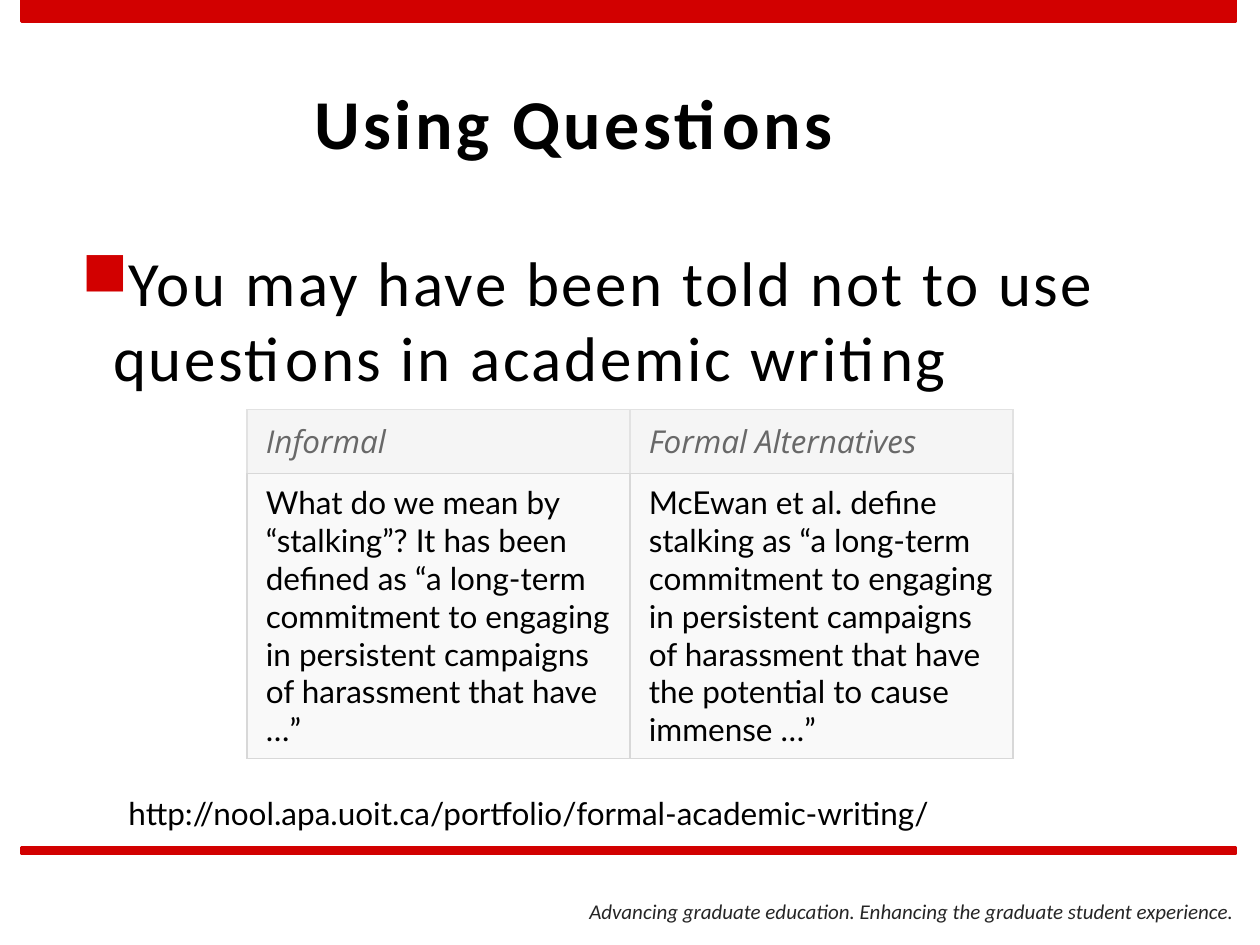
"""Build the slide on using questions in academic writing."""
from lxml import etree
from pptx import Presentation
from pptx.dml.color import RGBColor
from pptx.enum.shapes import MSO_SHAPE
from pptx.enum.text import MSO_ANCHOR, PP_ALIGN
from pptx.oxml.ns import qn
from pptx.util import Cm, Pt

RECT = MSO_SHAPE.RECTANGLE
MIDDLE, TOP = MSO_ANCHOR.MIDDLE, MSO_ANCHOR.TOP
LEFT, CENTER = PP_ALIGN.LEFT, PP_ALIGN.CENTER

HUES = {"red": "D20000", "ink": "000000", "dark": "262626", "gray": "686868",
        "head": "F5F5F5", "cell": "F9F9F9", "rim": "E2E2E2", "rule": "D8D8D8"}

BARS = [(0, 0.43), (17.09, 0.13)]
TEXTS = [
    ("Advancing graduate education. Enhancing the graduate student experience.",
     (11.63, 17.98, 13.54, 0.86), dict(size=12, hue="dark", italic=True)),
    ("You may have been told not to use questions in academic writing",
     (1.27, 4.78, 23.34, 12.24), dict(size=36, track=150, bullet="■")),
    ("Using Questions", (1.07, 0.99, 23.29, 2.92),
     dict(size=40, bold=True, track=200, align=CENTER, anchor=MIDDLE, right=2.54)),
    ("http://nool.apa.uoit.ca/portfolio/formal-academic-writing/",
     (2.34, 15.88, 22.02, 1.07), dict(face="Lato")),
]
ROWS = [
    ("Informal", "Formal Alternatives"),
    ("What do we mean by “stalking”? It has been defined as “a long-term "
     "commitment to engaging in persistent campaigns of harassment that have …”",
     "McEwan et al. define stalking as “a long-term commitment to engaging in "
     "persistent campaigns of harassment that have the potential to cause immense …”"),
]
STYLES = [
    dict(high=1.29, fill="head", rims=("rim", "rim", "rim", "rule"), right=0.38,
         font=dict(face="Open Sans", hue="gray", italic=True)),
    dict(high=5.74, fill="cell", rims=("rule",) * 4, right=0.2,
         font=dict(face="Lato")),
]
GRID = (4.98, 8.26)
WIDE = 7.72


def color(name):
    return RGBColor.from_string(HUES[name])


def mark(para, sign):
    props = para._p.get_or_add_pPr()
    props.set("marL", str(Cm(0.76)))
    props.set("indent", str(Cm(-0.64)))
    tint = etree.SubElement(props, qn("a:buClr"))
    etree.SubElement(tint, qn("a:srgbClr"), val=HUES["red"])
    etree.SubElement(props, qn("a:buChar"), char=sign)


def write(frame, text, face="Calibri", size=18, hue="ink", bold=False,
          italic=False, track=0, align=LEFT, bullet=None):
    para = frame.paragraphs[0]
    para.alignment = align
    if bullet:
        mark(para, bullet)
    run = para.add_run()
    run.text = text
    font = run.font
    font.name, font.size = face, Pt(size)
    font.bold, font.italic = bold, italic
    font.color.rgb = color(hue)
    if track:
        run._r.get_or_add_rPr().set("spc", str(track))


def add_bar(slide, top, high):
    bar = slide.shapes.add_shape(RECT, Cm(0.43), Cm(top), Cm(24.49), Cm(high))
    bar.shadow.inherit = False
    bar.fill.solid()
    bar.fill.fore_color.rgb = color("red")
    bar.line.color.rgb = color("red")
    bar.line.width = Pt(1.5)


def add_text(slide, text, place, anchor=TOP, right=0.25, **style):
    frame = slide.shapes.add_textbox(*map(Cm, place)).text_frame
    frame.word_wrap = True
    frame.vertical_anchor = anchor
    frame.margin_right = Cm(right)
    write(frame, text, **style)


def edge(cell, rims):
    props = cell._tc.get_or_add_tcPr()
    for spot, (side, hue) in enumerate(zip("LRTB", rims)):
        line = etree.Element(qn(f"a:ln{side}"), w=str(Pt(0.75)))
        fill = etree.SubElement(line, qn("a:solidFill"))
        etree.SubElement(fill, qn("a:srgbClr"), val=HUES[hue])
        props.insert(spot, line)


def add_grid(slide):
    left, top = map(Cm, GRID)
    high = sum(style["high"] for style in STYLES)
    table = slide.shapes.add_table(len(ROWS), 2, left, top,
                                   Cm(2 * WIDE), Cm(high)).table
    for col in table.columns:
        col.width = Cm(WIDE)
    for row, texts, style in zip(table.rows, ROWS, STYLES):
        row.height = Cm(style["high"])
        for cell, text in zip(row.cells, texts):
            cell.fill.solid()
            cell.fill.fore_color.rgb = color(style["fill"])
            cell.vertical_anchor = MIDDLE
            cell.margin_left, cell.margin_right = Cm(0.38), Cm(style["right"])
            cell.margin_top = cell.margin_bottom = Cm(0.2)
            edge(cell, style["rims"])
            write(cell.text_frame, text, **style["font"])


def main():
    deck = Presentation()
    deck.slide_width, deck.slide_height = Cm(25.4), Cm(19.05)
    slide = deck.slides.add_slide(deck.slide_layouts[6])
    for top, high in BARS:
        add_bar(slide, top, high)
    for text, place, style in TEXTS:
        add_text(slide, text, place, **style)
    add_grid(slide)
    deck.save("out.pptx")


if __name__ == "__main__":
    main()
